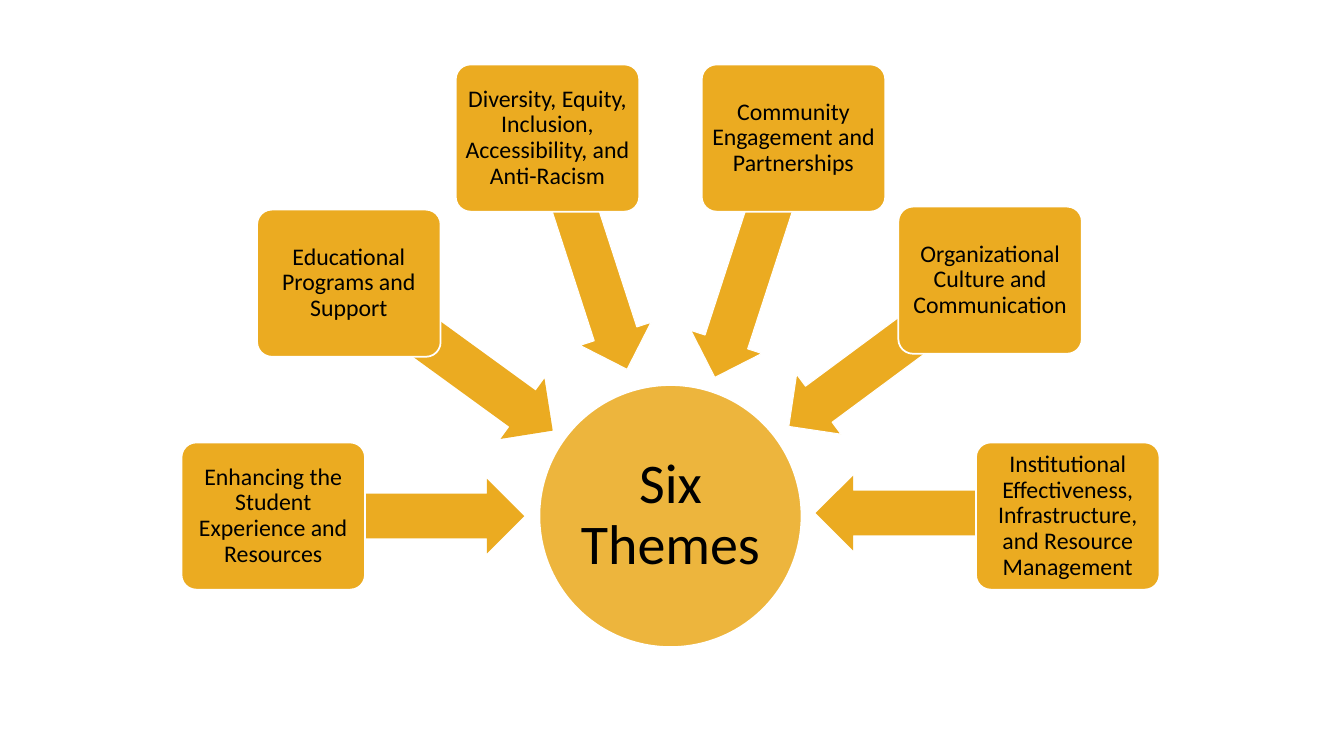
from dataclasses import dataclass

from lxml import etree
from pptx import Presentation
from pptx import util as u
from pptx.dml.color import RGBColor
from pptx.enum import shapes, text
from pptx.oxml.ns import qn


@dataclass(frozen=True)
class Theme:
    gold: RGBColor = RGBColor(0xEB, 0xAB, 0x21)
    white: RGBColor = RGBColor(0xFF, 0xFF, 0xFF)
    ink: RGBColor = RGBColor(0, 0, 0)
    font: str = "Calibri"
    hub: int = 40
    card: int = 17


LOOK = Theme()
CARD_W, CARD_H = 1.82, 1.46
ARROW_W, ARROW_H = 2.49, 0.74

# Label, card corner, arrow corner, arrow turn, arrow outline
THEMES = [
    ("Enhancing the Student Experience and Resources",
     (1.8, 4.39), (2.71, 4.75), 180, 0),
    ("Educational Programs and Support",
     (2.55, 2.08), (3.23, 3.17), 216, 0),
    ("Diversity, Equity, Inclusion, Accessibility, and Anti-Racism",
     (4.52, 0.64), (4.59, 2.11), 252, 0.75),
    ("Community Engagement and Partnerships",
     (6.96, 0.64), (6.23, 2.19), 288, 0.75),
    ("Organizational Culture and Communication",
     (8.91, 2.05), (7.58, 3.12), 323.5, 0.75),
    ("Institutional Effectiveness, Infrastructure, and Resource Management",
     (9.68, 4.39), (8.09, 4.72), 0, 0),
]


def add_form(slide, kind, box, edge=0, adjust=()):
    """Add a gold shape, with a white outline when edge is above zero."""
    form = slide.shapes.add_shape(kind, *(u.Inches(n) for n in box))
    form.shadow.inherit = False
    form.fill.solid()
    form.fill.fore_color.rgb = LOOK.gold
    if edge:
        form.line.color.rgb = LOOK.white
        form.line.width = u.Pt(edge)
    else:
        form.line.fill.background()
    for i, value in enumerate(adjust):
        form.adjustments[i] = value
    return form


def write(form, words, size, inset, color=LOOK.ink, spacing=0.9):
    """Centre wrapped words inside a shape."""
    frame = form.text_frame
    frame.word_wrap = True
    frame.vertical_anchor = text.MSO_ANCHOR.MIDDLE
    frame.margin_left = frame.margin_right = u.Inches(inset)
    frame.margin_top = frame.margin_bottom = u.Inches(inset)
    para = frame.paragraphs[0]
    para.alignment = text.PP_ALIGN.CENTER
    para.line_spacing = spacing
    run = para.add_run()
    run.text = words
    run.font.name = LOOK.font
    run.font.size = u.Pt(size)
    run.font.color.rgb = color


def add_hub(slide, box):
    """Draw the slightly see-through circle in the middle."""
    hub = add_form(slide, shapes.MSO_SHAPE.OVAL, box, edge=1.25)
    tint = hub.fill._xPr.find(qn("a:solidFill"))[0]
    etree.SubElement(tint, qn("a:alpha")).set("val", "87000")
    write(hub, "Six Themes", LOOK.hub, 0.03)


def add_arrow(slide, box, turn, edge):
    """Draw an arrow that points to the hub."""
    arrow = add_form(slide, shapes.MSO_SHAPE.LEFT_ARROW, box, edge, (0.6, 0.5))
    arrow.rotation = turn


def add_card(slide, box, label):
    """Draw one theme card over the tail of its arrow."""
    card = add_form(slide, shapes.MSO_SHAPE.ROUNDED_RECTANGLE, box, 1.25, (0.1,))
    write(card, label, LOOK.card, 0.04)


def main():
    deck = Presentation()
    deck.slide_width = u.Inches(13.33)
    deck.slide_height = u.Inches(7.5)
    slide = deck.slides.add_slide(deck.slide_layouts[6])

    add_hub(slide, (5.35, 3.82, 2.6, 2.6))
    for label, card, arrow, turn, edge in THEMES:
        add_arrow(slide, (*arrow, ARROW_W, ARROW_H), turn, edge)
        add_card(slide, (*card, CARD_W, CARD_H), label)

    deck.save("out.pptx")


if __name__ == "__main__":
    main()
